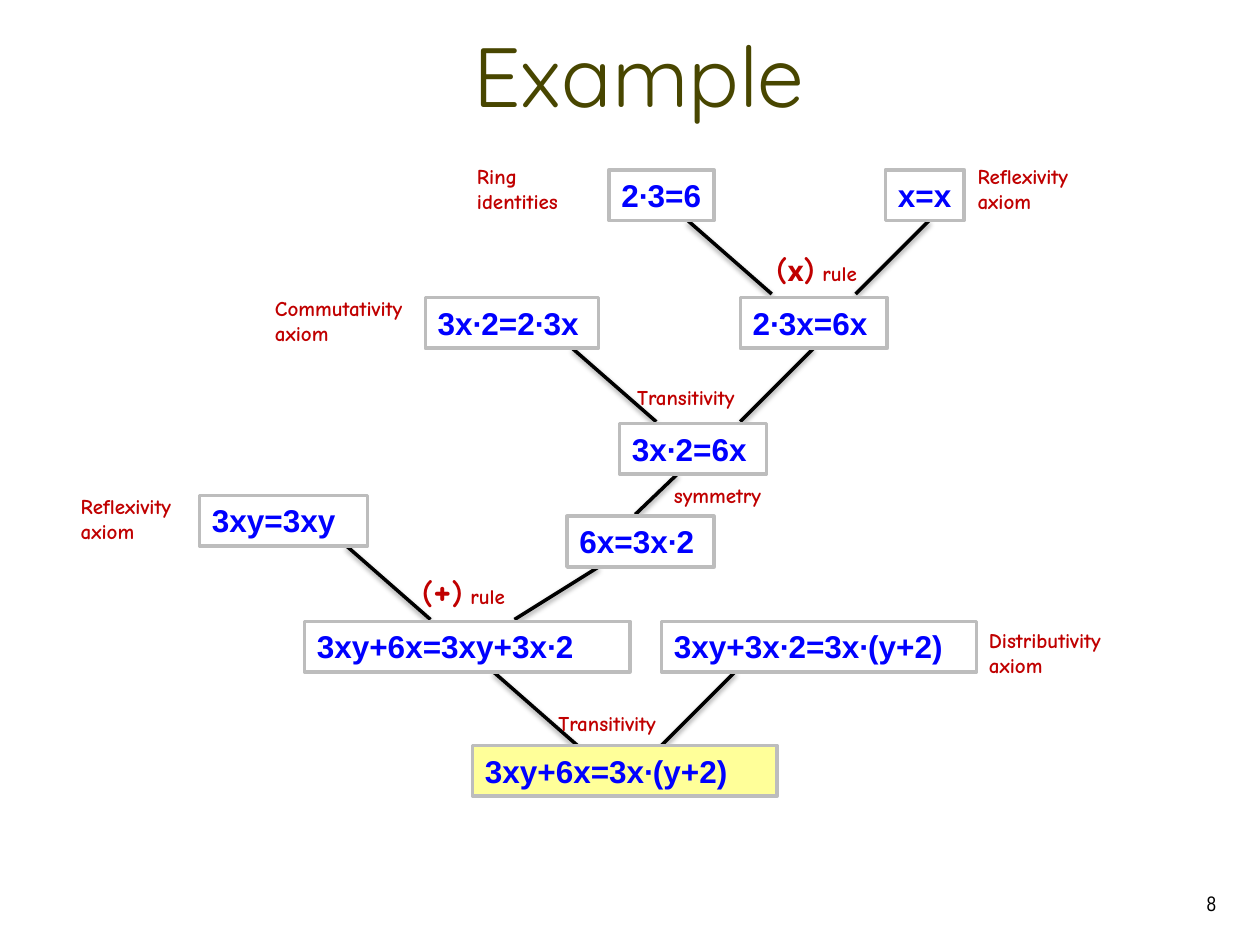
from pptx import Presentation
from pptx.dml.color import RGBColor
from pptx.enum.shapes import MSO_CONNECTOR as CONN, MSO_SHAPE as SHAPE
from pptx.enum.text import MSO_ANCHOR as ANCHOR, PP_ALIGN as ALIGN
from pptx.oxml import parse_xml
from pptx.oxml.ns import nsdecls
from pptx.util import Pt

BLACK = RGBColor(0x00, 0x00, 0x00)
WHITE = RGBColor(0xFF, 0xFF, 0xFF)
YELLOW = RGBColor(0xFF, 0xFF, 0x99)
GREY = RGBColor(0xBD, 0xBD, 0xBD)
BLUE = RGBColor(0x00, 0x00, 0xFF)
RED = RGBColor(0xC0, 0x00, 0x00)
OLIVE = RGBColor(0x48, 0x46, 0x00)

SHADOW = (
    f'<a:effectLst {nsdecls("a")}>'
    f'<a:outerShdw blurRad="{Pt(3.1)}" dist="{Pt(1.6)}" dir="5400000">'
    '<a:srgbClr val="000000"><a:alpha val="38000"/></a:srgbClr>'
    '</a:outerShdw></a:effectLst>'
)


def write(tf, text, size=12, font="Comic Neue", color=RED, bold=True,
          align=ALIGN.LEFT, anchor=ANCHOR.TOP):
    """Fill a frame with a string, or with (string, size) pieces."""
    tf.word_wrap = True
    tf.vertical_anchor = anchor
    p = tf.paragraphs[0]
    p.alignment = align
    pieces = [(text, size)] if isinstance(text, str) else text
    for piece, piece_size in pieces:
        r = p.add_run()
        r.text = piece
        r.font.size = Pt(piece_size)
        r.font.name = font
        r.font.bold = bold
        r.font.color.rgb = color
    return p


class ProofTree:
    box_height = 29
    line_width = 2

    def __init__(self, slide):
        self.s = slide

    def title(self, text, x, y, w, h):
        sp = self.s.shapes.title
        sp.left, sp.top, sp.width, sp.height = Pt(x), Pt(y), Pt(w), Pt(h)
        p = write(sp.text_frame, text, size=48, font="Quicksand", color=OLIVE,
                  bold=False, align=ALIGN.CENTER, anchor=ANCHOR.MIDDLE)
        p.space_before = Pt(6)

    def label(self, text, x, y, w=96, h=36, **fmt):
        sp = self.s.shapes.add_textbox(Pt(x), Pt(y), Pt(w), Pt(h))
        write(sp.text_frame, text, **fmt)

    def equation(self, text, x, y, w, fill=WHITE):
        sp = self.s.shapes.add_shape(SHAPE.RECTANGLE, Pt(x), Pt(y), Pt(w),
                                     Pt(self.box_height))
        sp.shadow.inherit = False
        sp.fill.solid()
        sp.fill.fore_color.rgb = fill
        sp.line.color.rgb = GREY
        sp.line.width = Pt(self.line_width)
        sp.text_frame.margin_right = 0
        write(sp.text_frame, text, size=18, font="Arial", color=BLUE)

    def line(self, x1, y1, x2, y2):
        c = self.s.shapes.add_connector(CONN.STRAIGHT, Pt(x1), Pt(y1),
                                        Pt(x2), Pt(y2))
        c.line.color.rgb = BLACK
        c.line.width = Pt(self.line_width)
        c._element.spPr.append(parse_xml(SHADOW))

    def branches(self, x, y, right=(42, 42)):
        """Lines from a conclusion up to its two premises."""
        self.line(x, y, x - 48, y - 42)
        self.line(x + 48, y, x + 48 + right[0], y - right[1])


def main():
    prs = Presentation()
    prs.slide_width, prs.slide_height = Pt(720), Pt(540)
    tree = ProofTree(prs.slides.add_slide(prs.slide_layouts[5]))

    tree.title("Example", 28, 12, 674, 60)

    # Inference lines
    for x, y in ((441, 168), (375, 241), (330, 426)):
        tree.branches(x, y)
    tree.branches(246, 354, right=(48, 30))
    tree.line(363, 294, 387, 271)

    # Equations, from the axioms down
    for text, x, y, w in (
        ("2∙3=6", 348, 97, 60),
        ("x=x", 506, 97, 45),
        ("3x∙2=2∙3x", 243, 170, 99),
        ("2∙3x=6x", 423, 170, 84),
        ("3x∙2=6x", 354, 242, 84),
        ("3xy=3xy", 114, 283, 96),
        ("6x=3x∙2", 324, 295, 84),
        ("3xy+6x=3xy+3x∙2", 174, 355, 186),
        ("3xy+3x∙2=3x∙(y+2)", 378, 355, 180),
    ):
        tree.equation(text, x, y, w)
    tree.equation("3xy+6x=3x∙(y+2)", 270, 426, 174, fill=YELLOW)

    # Axiom names
    tree.label("Ring identities", 265.5, 90, w=81)
    for name, x, y in (
        ("Reflexivity", 551.5, 90),
        ("Commutativity", 150, 165.5),
        ("Reflexivity", 39, 278.5),
        ("Distributivity", 558, 355),
    ):
        tree.label(f"{name} axiom", x, y)

    # Rule names
    for name, x, y in (
        ("Transitivity", 357, 216),
        ("symmetry", 378, 272),
        ("Transitivity", 312, 402.5),
    ):
        tree.label(name, x, y, h=22)
    for sign, size, x, y, w, h in (
        ("х", 16, 436.5, 139.5, 108, 44),
        ("+", 24, 234, 318, 96, 36),
    ):
        tree.label([("(", 18), (sign, size), (")", 18), (" rule", 12)],
                   x, y, w, h)

    # Page number
    tree.label("8", 654, 504, 48, 24, font="Arial Narrow", color=BLACK,
               bold=False, align=ALIGN.RIGHT, anchor=ANCHOR.MIDDLE)

    prs.save("out.pptx")


if __name__ == "__main__":
    main()
